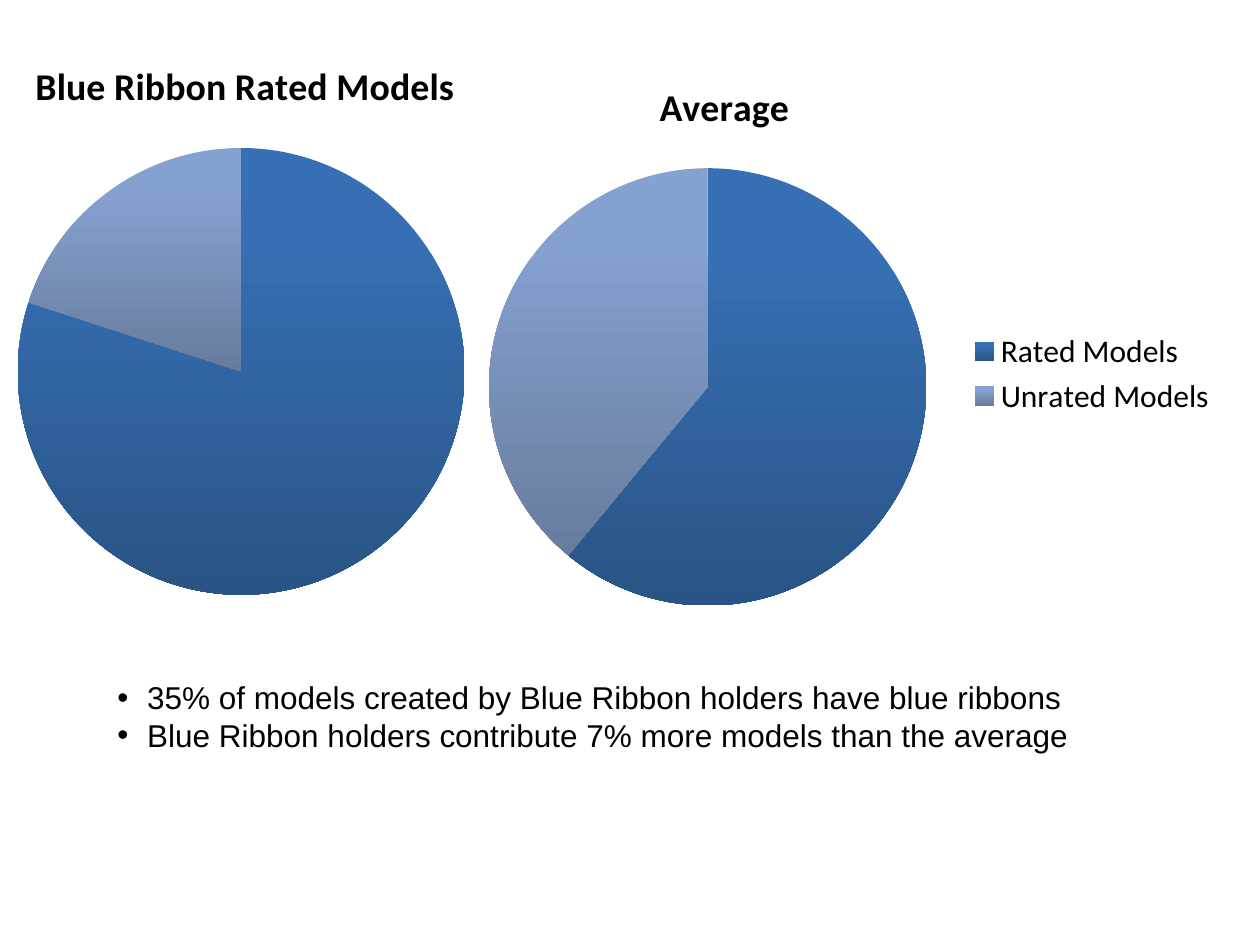
from lxml import etree
from pptx import Presentation
from pptx.chart.data import CategoryChartData
from pptx.dml.color import RGBColor
from pptx.enum.chart import XL_CHART_TYPE, XL_LEGEND_POSITION
from pptx.oxml import parse_xml
from pptx.oxml.ns import nsdecls, qn
from pptx.util import Pt

COLORS = {
    "text": "000000",
    "rated_top": "366FB3", "rated_bottom": "295485",
    "unrated_top": "85A1D0", "unrated_bottom": "677C9D",
}


def set_layout(parent, index, inner=False, **fractions):
    """Place a chart part by fractions (x, y, w, h) of the chart area."""
    for old in parent.findall(qn("c:layout")):
        parent.remove(old)
    layout = parse_xml(f"<c:layout {nsdecls('c')}><c:manualLayout/></c:layout>")
    values = {"layoutTarget": "inner"} if inner else {}
    values.update(xMode="edge", yMode="edge", **fractions)
    for tag, value in values.items():
        etree.SubElement(layout[0], qn(f"c:{tag}")).set("val", str(value))
    parent.insert(index, layout)


prs = Presentation()
prs.slide_width, prs.slide_height = Pt(720), Pt(540)
s = prs.slides.add_slide(prs.slide_layouts[6])
black = RGBColor.from_string(COLORS["text"])

# title, categories, values, series count, chart left and top,
# title, pie and legend placement
pies = [
    ("Blue Ribbon Rated Models", ("1", "2"), (80, 20), 4, -102.2, 30.2,
     dict(x=0.247, y=-0.01), dict(x=0.234, y=0.17, w=0.532, h=0.798), None),
    ("Average", ("Rated Models", "Unrated Models"), (61, 39), 2, 240, 36,
     dict(x=0.277, y=0.019), dict(x=0.082, y=0.188, w=0.521, h=0.781),
     dict(x=0.635, y=0.47, w=0.33, h=0.17)),
]
for title, categories, values, count, left, top, title_at, pie_at, legend_at in pies:
    data = CategoryChartData()
    data.categories = categories
    for n in range(count):
        data.add_series(f"Series {n + 1}", values)
    chart = s.shapes.add_chart(XL_CHART_TYPE.PIE, Pt(left), Pt(top),
                               Pt(480), Pt(320), data).chart
    chart.font.name = "Calibri"
    chart.font.size = Pt(18)
    chart.font.color.rgb = black

    chart.has_title = True
    tf = chart.chart_title.text_frame
    tf.text = title
    font = tf.paragraphs[0].font
    font.name, font.size, font.bold = "Calibri", Pt(21.6), True
    font.color.rgb = black
    plot = chart.plots[0]
    plot.vary_by_categories = True
    set_layout(chart.chart_title._element, 1, **title_at)
    set_layout(plot._element.getparent(), 0, inner=True, **pie_at)

    chart.has_legend = legend_at is not None
    if legend_at:
        chart.legend.position = XL_LEGEND_POSITION.RIGHT
        chart.legend.include_in_layout = False
        set_layout(chart.legend._element, 1, **legend_at)

    for i, name in enumerate(("rated", "unrated")):
        point = plot.series[0].points[i]
        point.format.line.fill.background()
        fill = point.format.fill
        fill.gradient()
        fill.gradient_angle = 270
        for stop, end, position in zip(fill.gradient_stops, ("top", "bottom"), (0.2, 1)):
            stop.color.rgb = RGBColor.from_string(COLORS[f"{name}_{end}"])
            stop.position = position

    # A new pie holds only its first series; this adds the others in its format.
    chart.replace_data(data)

tf = s.shapes.add_textbox(Pt(60), Pt(384), Pt(564), Pt(73)).text_frame
tf.word_wrap = True
bullets = [
    "35% of models created by Blue Ribbon holders have blue ribbons",
    "Blue Ribbon holders contribute 7% more models than the average",
]
for i, text in enumerate(bullets):
    p = tf.paragraphs[0] if i == 0 else tf.add_paragraph()
    p.text = text
    p.font.name, p.font.size = "Arial", Pt(18)
    p.font.color.rgb = black
    pPr = p._p.get_or_add_pPr()
    pPr.set("marL", str(Pt(17)))
    pPr.set("indent", str(Pt(-17)))
    pPr.insert(0, parse_xml(f'<a:buFont {nsdecls("a")} typeface="Arial"/>'))
    pPr.insert(1, parse_xml(f'<a:buChar {nsdecls("a")} char="•"/>'))

prs.save("out.pptx")
